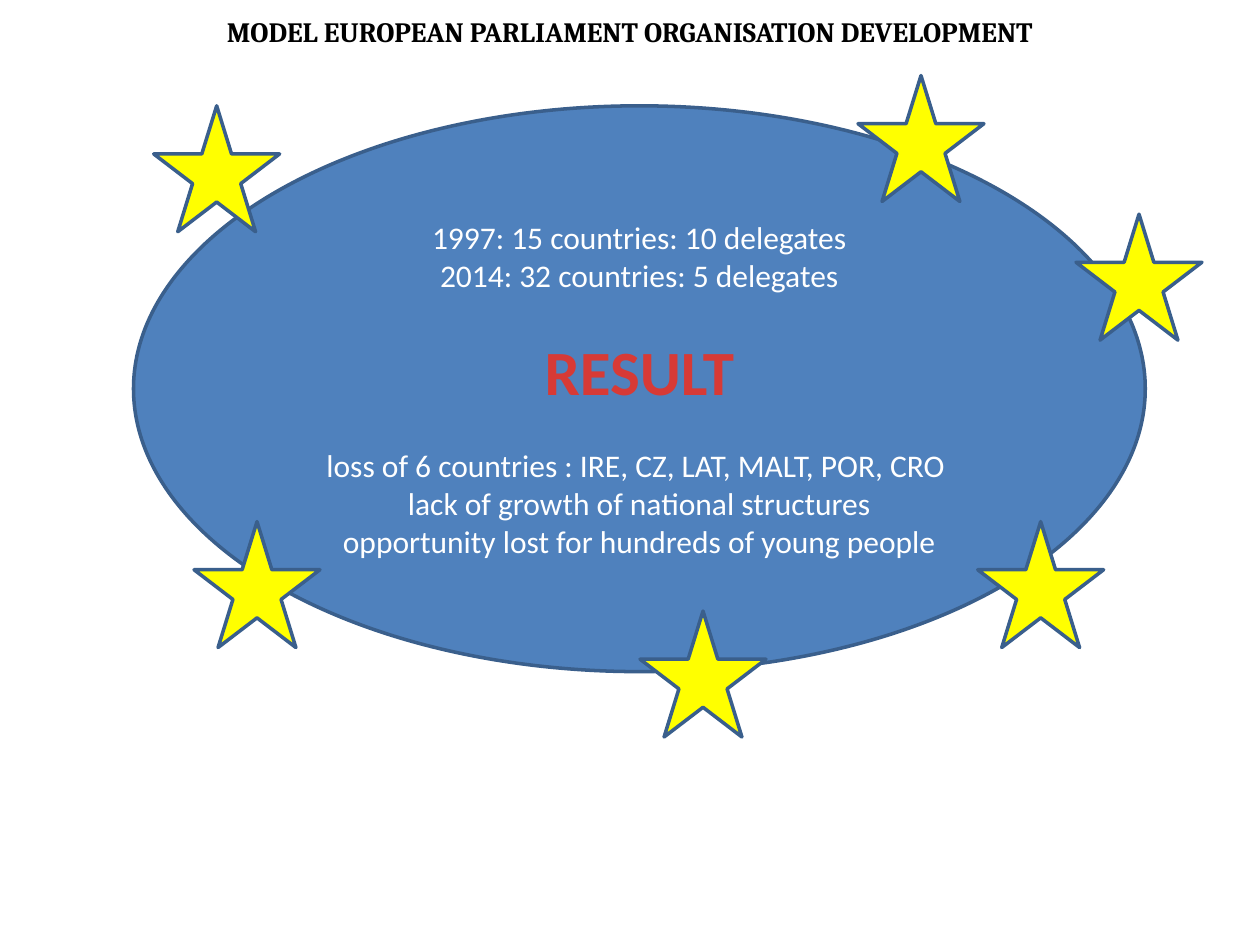
from pptx import Presentation
from pptx.dml.color import RGBColor
from pptx.enum.shapes import MSO_SHAPE
from pptx.enum.text import MSO_ANCHOR, PP_ALIGN
from pptx.util import Inches, Pt

COLORS = {"blue": "4F81BD", "edge": "3A5F8C", "star": "FFFF00",
          "white": "FFFFFF", "black": "000000", "result": "D73A36"}
COLS, ROWS = 100, 75

TITLE = dict(name="Cambria", size=Pt(16), bold=True)
BODY = dict(name="Calibri", size=Pt(18), bold=False)
RESULT = dict(name="Calibri", size=Pt(36), bold=True)
GAP = dict(space_before=Pt(22), space_after=Pt(22))


class Deck:
    """Holds the style and the current slide; lengths are grid columns and rows."""

    def __init__(self, prs):
        self.prs = prs
        self.s = prs.slides.add_slide(prs.slide_layouts[5])

    def box(self, x, y, w, h):
        cw, rh = self.prs.slide_width / COLS, self.prs.slide_height / ROWS
        return [round(v) for v in (x * cw, y * rh, w * cw, h * rh)]

    def line(self, p, text, color, font, spacing=None):
        p.alignment = PP_ALIGN.CENTER
        for key, value in (spacing or {}).items():
            setattr(p, key, value)
        r = p.add_run()
        r.text = text
        for key, value in font.items():
            setattr(r.font, key, value)
        r.font.color.rgb = RGBColor.from_string(COLORS[color])

    def title(self, text, *area):
        sp = self.s.shapes.title
        sp.left, sp.top, sp.width, sp.height = self.box(*area)
        tf = sp.text_frame
        tf.vertical_anchor, tf.word_wrap = MSO_ANCHOR.MIDDLE, False
        self.line(tf.paragraphs[0], text, "black", TITLE)

    def shape(self, kind, fill, *area):
        sp = self.s.shapes.add_shape(kind, *self.box(*area))
        sp.shadow.inherit = False
        sp.fill.solid()
        sp.fill.fore_color.rgb = RGBColor.from_string(COLORS[fill])
        sp.line.color.rgb = RGBColor.from_string(COLORS["edge"])
        sp.line.width = Pt(2)
        return sp

    def ellipse(self, lines, *area):
        tf = self.shape(MSO_SHAPE.OVAL, "blue", *area).text_frame
        tf.vertical_anchor, tf.word_wrap = MSO_ANCHOR.MIDDLE, True
        for i, args in enumerate(lines):
            self.line(tf.add_paragraph() if i else tf.paragraphs[0], *args)

    def star(self, x, y, size=10):
        self.shape(MSO_SHAPE.STAR_5_POINT, "star", x, y, size, size)


def main():
    prs = Presentation()
    prs.slide_width, prs.slide_height = Inches(10), Inches(7.5)
    deck = Deck(prs)

    # Heading
    deck.title("MODEL EUROPEAN PARLIAMENT ORGANISATION DEVELOPMENT", 9, 0.6, 82, 3.7)

    # Central message
    deck.ellipse([
        ("1997: 15 countries: 10 delegates", "white", BODY),
        ("2014: 32 countries: 5 delegates", "white", BODY),
        ("RESULT", "result", RESULT, GAP),
        ("loss of 6 countries : IRE, CZ, LAT, MALT, POR, CRO ", "white", BODY),
        ("lack of growth of national structures", "white", BODY),
        ("opportunity lost for hundreds of young people", "white", BODY),
    ], 10.6, 8.4, 80.3, 44.9)

    # Stars around the rim
    for x, y in [(68.1, 6), (85.4, 17), (12.2, 8.4),
                 (15.4, 41.4), (50.8, 48.5), (77.6, 41.4)]:
        deck.star(x, y)

    prs.save("out.pptx")


if __name__ == "__main__":
    main()
